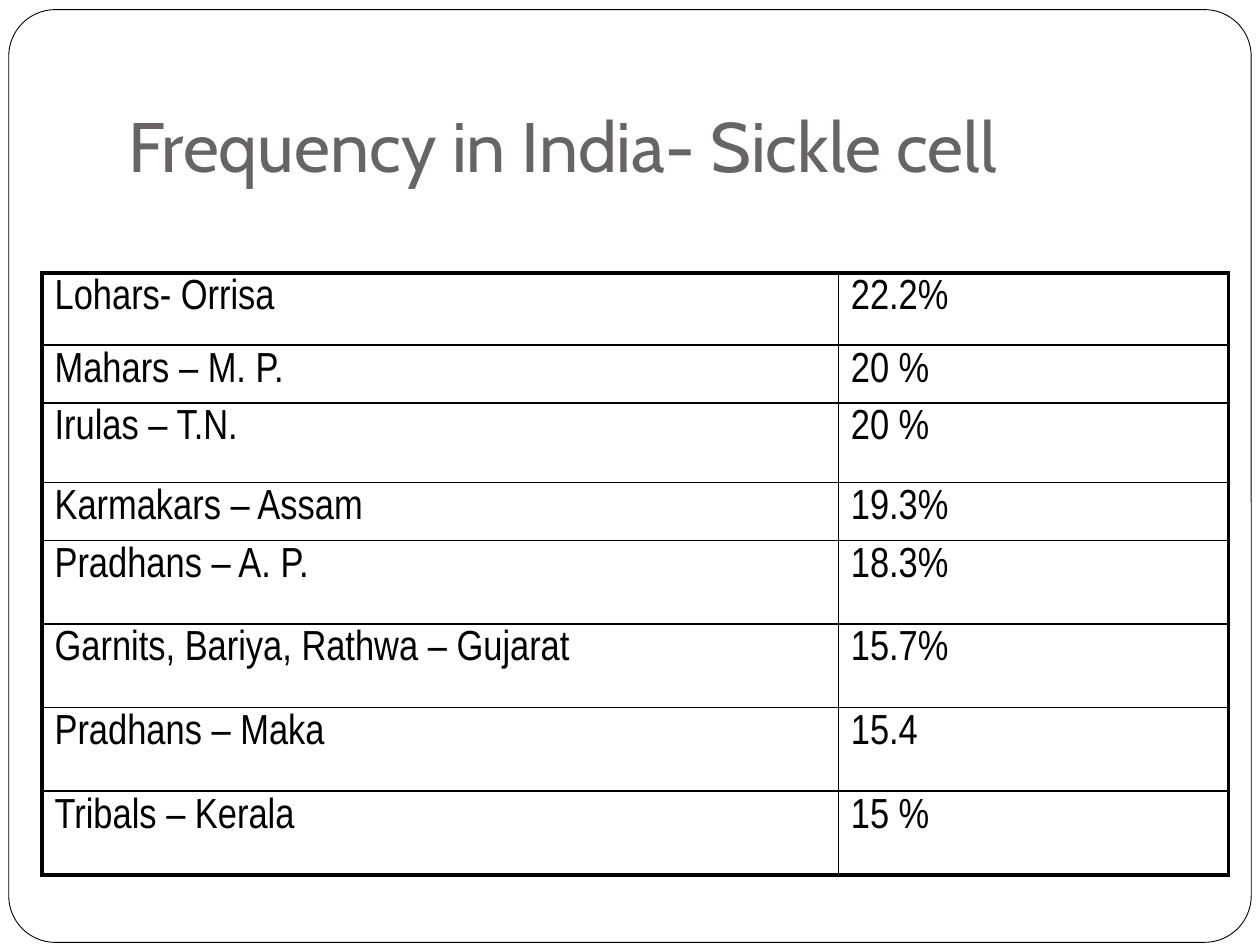
import pptx
import pptx.util
import pptx.dml.color
import pptx.enum.shapes
import pptx.enum.text
import pptx.oxml
import pptx.oxml.ns
from lxml import etree

Pt = pptx.util.Pt
COLORS = {"paper": "FFFFFF", "ink": "000000", "title": "696464"}
TITLE = "Frequency in India- Sickle cell"
ROWS = [
    ("Lohars- Orrisa", "22.2%", 41.3),
    ("Mahars – M. P.", "20 %", 33),
    ("Irulas – T.N.", "20 %", 45.5),
    ("Karmakars – Assam", "19.3%", 33),
    ("Pradhans – A. P.", "18.3%", 47.8),
    ("Garnits, Bariya, Rathwa – Gujarat", "15.7%", 47.8),
    ("Pradhans – Maka", "15.4", 47.8),
    ("Tribals – Kerala", "15 %", 47.8),
]
WIDTHS = [455, 223]
THICK, THIN = 2.25, 1


def color(name):
    return pptx.dml.color.RGBColor.from_string(COLORS[name])


def style(para, font, size, tone):
    for run in para.runs:
        run.font.name = font
        run.font.size = Pt(size)
        run.font.color.rgb = color(tone)


def border(cell, widths):
    props = cell._tc.get_or_add_tcPr()
    qn = pptx.oxml.ns.qn
    for spot, (side, width) in enumerate(widths.items()):
        line = etree.Element(qn("a:" + side), w=str(Pt(width)))
        fill = etree.SubElement(line, qn("a:solidFill"))
        etree.SubElement(fill, qn("a:srgbClr"), val=COLORS["ink"])
        props.insert(spot, line)


def main():
    deck = pptx.Presentation()
    deck.slide_width, deck.slide_height = Pt(720), Pt(540)
    slide = deck.slides.add_slide(deck.slide_layouts[5])

    title = slide.shapes.title
    title.left, title.top, title.width, title.height = Pt(66), Pt(30), Pt(600), Pt(84)
    frame = title.text_frame
    frame.text = TITLE
    frame.vertical_anchor = pptx.enum.text.MSO_ANCHOR.BOTTOM
    frame.margin_bottom = Pt(7.2)
    para = frame.paragraphs[0]
    para.alignment = pptx.enum.text.PP_ALIGN.LEFT
    style(para, "Cabin", 40, "title")

    panel = slide.shapes.add_shape(
        pptx.enum.shapes.MSO_SHAPE.ROUNDED_RECTANGLE, Pt(5), Pt(5.5), Pt(710), Pt(533))
    panel.adjustments[0] = 0.05
    panel.shadow.inherit = False
    panel.fill.solid()
    panel.fill.fore_color.rgb = color("paper")
    panel.line.color.rgb = color("ink")
    panel.line.width = Pt(0.5)
    title.element.addprevious(panel.element)

    table = slide.shapes.add_table(
        len(ROWS), len(WIDTHS), Pt(24), Pt(156), Pt(sum(WIDTHS)),
        Pt(sum(row[-1] for row in ROWS))).table
    table.first_row = table.horz_banding = False
    for col, width in zip(table.columns, WIDTHS):
        col.width = Pt(width)
    last, end = len(ROWS) - 1, len(WIDTHS) - 1
    for i, (*texts, height) in enumerate(ROWS):
        table.rows[i].height = Pt(height)
        for j, text in enumerate(texts):
            cell = table.cell(i, j)
            cell.text_frame.text = text
            style(cell.text_frame.paragraphs[0], "Arial Narrow", 24, "ink")
            cell.fill.background()
            edges = {"lnL": j == 0, "lnR": j == end, "lnT": i == 0, "lnB": i == last}
            border(cell, {side: THICK if outer else THIN for side, outer in edges.items()})

    deck.save("out.pptx")


if __name__ == "__main__":
    main()
